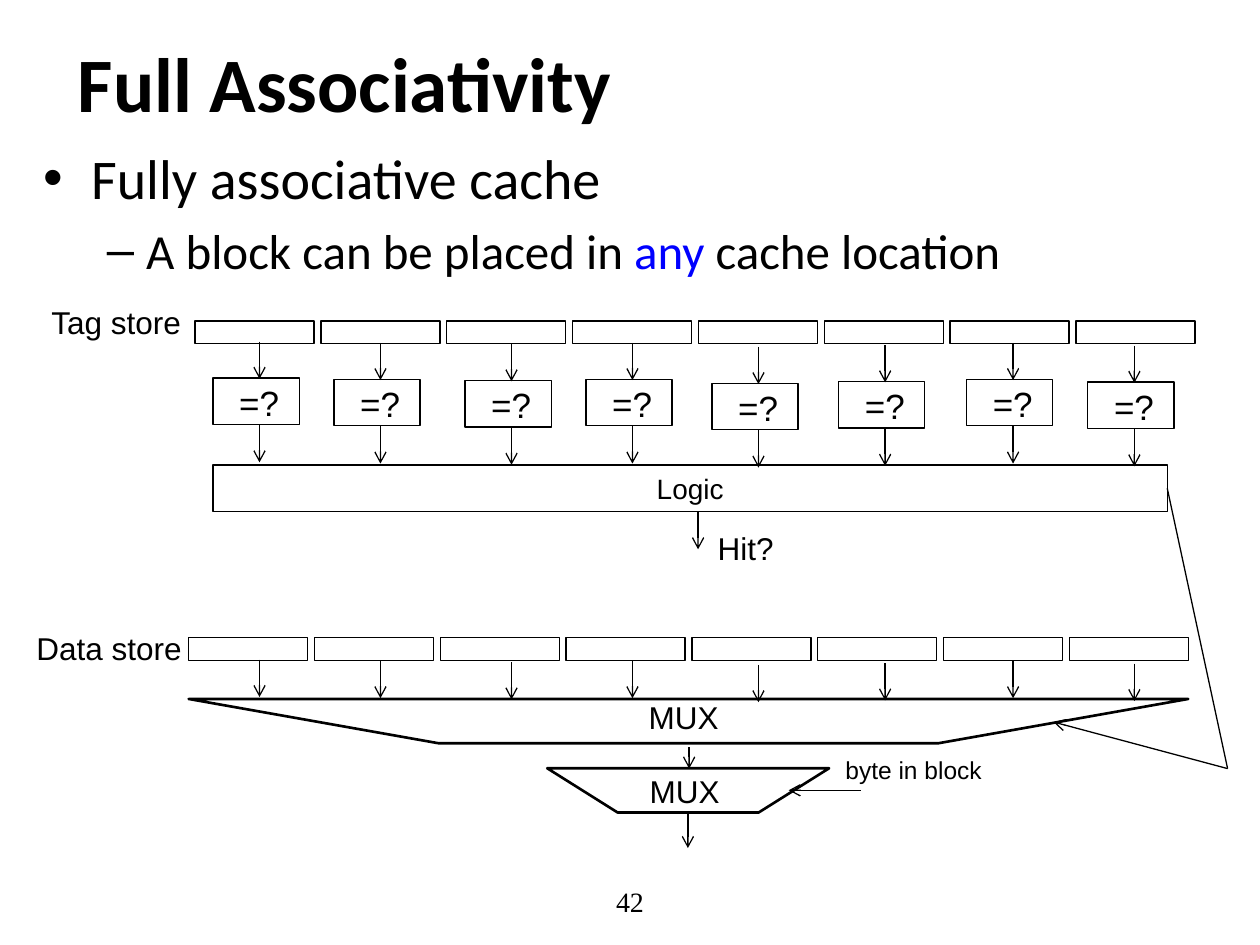
from pptx import Presentation
from pptx.dml.color import RGBColor
from pptx.enum.shapes import MSO_CONNECTOR, MSO_SHAPE
from pptx.enum.text import MSO_ANCHOR, PP_ALIGN
from pptx.oxml.ns import qn
from pptx.util import Pt
from lxml import etree

RECT, STRAIGHT = MSO_SHAPE.RECTANGLE, MSO_CONNECTOR.STRAIGHT
TOP, MIDDLE = MSO_ANCHOR.TOP, MSO_ANCHOR.MIDDLE
LEFT, CENTER = PP_ALIGN.LEFT, PP_ALIGN.CENTER
COLORS = {"ink": "000000", "accent": "0000FF"}
INK = RGBColor.from_string(COLORS["ink"])

prs = Presentation()
prs.slide_width, prs.slide_height = Pt(720), Pt(540)
slide = prs.slides.add_slide(prs.slide_layouts[6])
shapes = slide.shapes


def write(frame, paragraphs, size=18, font="Arial", bold=False, align=LEFT,
          anchor=TOP, wrap=False):
    """Fill a frame; each paragraph is a list of (text, colour name) runs."""
    frame.word_wrap = wrap
    frame.vertical_anchor = anchor
    if isinstance(paragraphs, str):
        paragraphs = [[(paragraphs, "ink")]]
    for i, runs in enumerate(paragraphs):
        paragraph = frame.paragraphs[0] if i == 0 else frame.add_paragraph()
        paragraph.alignment = align
        for text, color in runs:
            run = paragraph.add_run()
            run.text = text
            run.font.size, run.font.name, run.font.bold = Pt(size), font, bold
            run.font.color.rgb = RGBColor.from_string(COLORS[color])


def connect(x1, y1, x2, y2, arrow=True):
    line = shapes.add_connector(STRAIGHT, Pt(x1), Pt(y1), Pt(x2), Pt(y2))
    line.line.color.rgb = INK
    line.line.width = Pt(0.75)
    if arrow:
        etree.SubElement(line.line._get_or_add_ln(), qn("a:tailEnd"), type="arrow")
    etree.SubElement(line._element.spPr, qn("a:effectLst"))
    return line


# Title, bullets and page number
title = shapes.add_textbox(Pt(37.5), Pt(1.5), Pt(648), Pt(90))
write(title.text_frame, "Full Associativity", size=44, font="Calibri", bold=True,
      anchor=MIDDLE, wrap=True)

bullets = shapes.add_textbox(Pt(18), Pt(78.5), Pt(678), Pt(409))
write(bullets.text_frame, [
    [("Fully associative cache", "ink")],
    [("A block can be placed in ", "ink"), ("any", "accent"), (" cache location", "ink")],
], size=32, font="Calibri", wrap=True)
levels = [("•", 32, 27, 27), ("–", 28, 58.5, 22.5)]
for level, (mark, size, margin, hang) in enumerate(levels):
    bullet = bullets.text_frame.paragraphs[level]
    bullet.level = level
    bullet.space_before = Pt(size * 0.2)
    for run in bullet.runs:
        run.font.size = Pt(size)
    props = bullet._p.get_or_add_pPr()
    props.set("marL", str(Pt(margin)))
    props.set("indent", str(-Pt(hang)))
    etree.SubElement(props, qn("a:buFont"), typeface="Arial")
    etree.SubElement(props, qn("a:buChar"), char=mark)

page_number = shapes.add_textbox(Pt(246), Pt(500.5), Pt(228), Pt(29))
write(page_number.text_frame, "42", size=16, font="Times New Roman",
      align=CENTER, anchor=MIDDLE, wrap=True)

# Rectangles: tag and data entries, comparators, hit logic
ENTRY_PITCH = 71.9
comparators = [(148.3, 216), (217.4, 216.7), (292.3, 217.4), (361.4, 216.7),
               (433.4, 219), (505.8, 218), (578.9, 216.7), (648.2, 218.3)]
boxes = [(left + i * ENTRY_PITCH, top, 68, 13)
         for left, top in ((111.5, 183.5), (107.8, 364.3)) for i in range(8)]
boxes += [(x - 26.6, top, 49.3, 26.6) for x, top in comparators]
boxes.append((121.7, 265.7, 545.3, 26.6))
for left, top, width, height in boxes:
    box = shapes.add_shape(RECT, Pt(left), Pt(top), Pt(width), Pt(height))
    box.shadow.inherit = False
    box.fill.background()
    box.line.color.rgb = INK
    box.line.width = Pt(0.75)
logic = box
write(logic.text_frame, "Logic", size=16, align=CENTER, wrap=True)

# Comparator signs and the arrows of each column
for x, top in comparators:
    sign = shapes.add_textbox(Pt(x - 18.7), Pt(top - 1.6), Pt(37.4), Pt(31.5))
    write(sign.text_frame, "=?", size=20)
    for offset in (-20.8, 26.9, 161):
        connect(x, top + offset, x, top + offset + 21.3)

# Multiplexers
for left, right, top, inset in ((107.8, 679, 399.4, 142.8), (312.7, 473.8, 439, 40.3)):
    outline = shapes.build_freeform(Pt(right), Pt(top))
    outline.add_line_segments([(Pt(right - inset), Pt(top + 25.3)),
                               (Pt(left + inset), Pt(top + 25.3)),
                               (Pt(left), Pt(top))], close=True)
    mux = outline.convert_to_shape()
    mux.shadow.inherit = False
    mux.fill.background()
    mux.line.color.rgb = INK
    mux.line.width = Pt(1.5)

# Labels
for text, left, top, width, size in (
    ("Tag store", 22.3, 169.5, 89, 18),
    ("Data store", 13.7, 356, 98.6, 18),
    ("MUX", 363.6, 395.6, 64, 18),
    ("MUX", 364.2, 437.6, 63, 18),
    ("byte in block", 476, 427.7, 106, 14),
    ("Hit?", 403, 299, 46.8, 18),
):
    label = shapes.add_textbox(Pt(left), Pt(top), Pt(width), Pt(size * 1.6))
    write(label.text_frame, text, size=size)

# Hit output, byte selection and block selection
connect(398.9, 292.3, 398.9, 313.9)
connect(393.8, 427, 393.8, 439.2)
connect(393.1, 464.4, 393.1, 484.6)
connect(491.8, 451.6, 450.7, 451.6)
hit_line = connect(667, 279, 701.5, 439.2, arrow=False)
hit_line.begin_connect(logic, 3)
connect(701.5, 439.2, 602, 412.6)

prs.save("out.pptx")
